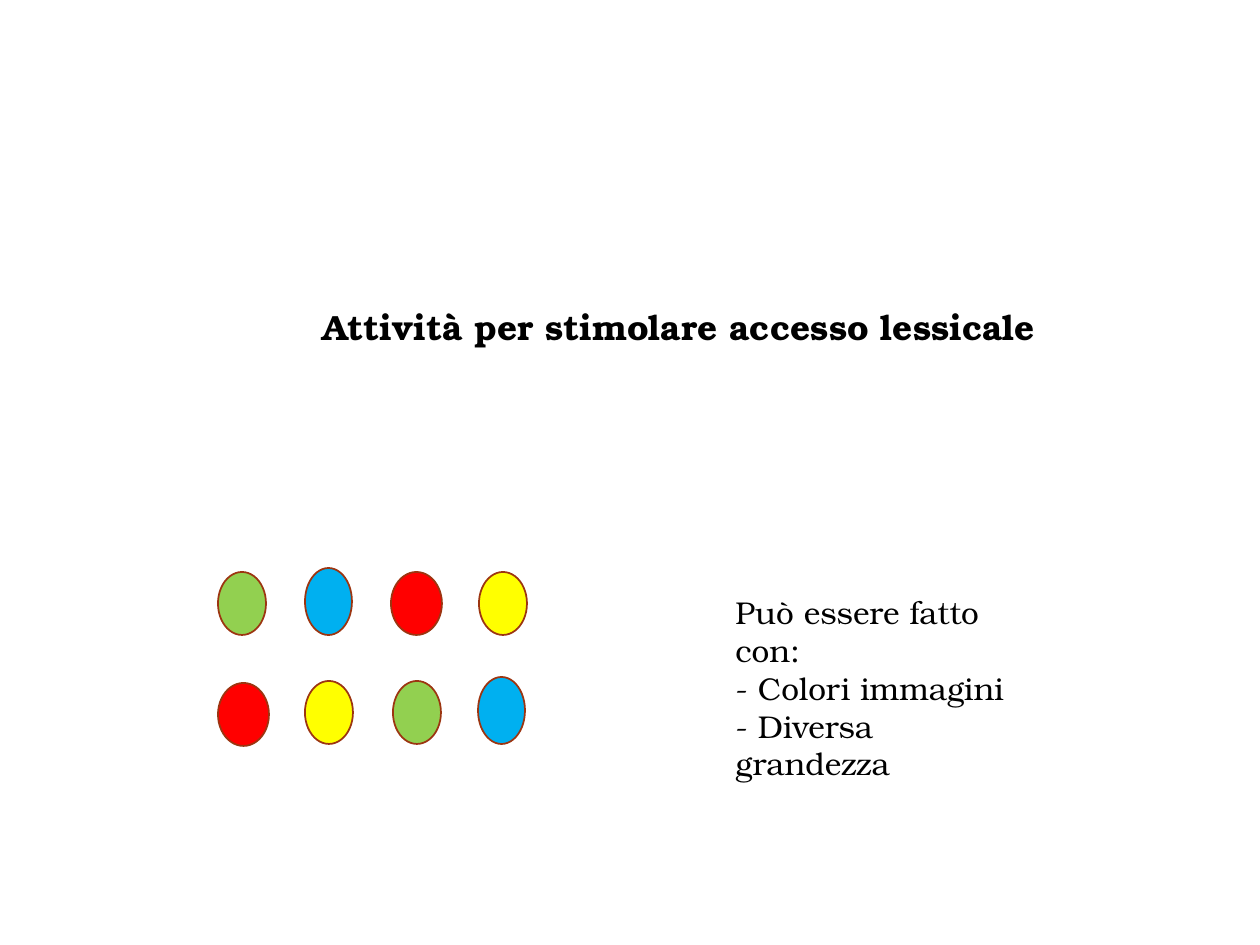
from pptx import Presentation
from pptx.dml.color import RGBColor
from pptx.enum.shapes import MSO_SHAPE
from pptx.enum.text import MSO_ANCHOR, PP_ALIGN
from pptx.util import Emu, Pt

PX = 914400 // 126
BLACK = RGBColor(0x00, 0x00, 0x00)
YELLOW = RGBColor(0xFF, 0xFF, 0x00)
GREEN = RGBColor(0x92, 0xD0, 0x50)
RED = RGBColor(0xFF, 0x00, 0x00)
BLUE = RGBColor(0x00, 0xB0, 0xF0)
OUTLINE = RGBColor(0x9C, 0x35, 0x11)
FONT = "TeX Gyre Bonum"


def px(*lengths):
    return [Emu(length * PX) for length in lengths]


def format_font(font, **values):
    for name, value in values.items():
        setattr(font, name, value)
    font.color.rgb = BLACK


deck = Presentation()
deck.slide_width, deck.slide_height = px(1260, 945)
page = deck.slides.add_slide(deck.slide_layouts[5])

title = page.shapes.title
title.left, title.top, title.width, title.height = px(168, 243, 1022, 571)
frame = title.text_frame
frame.text = "Attività per stimolare accesso lessicale"
frame.word_wrap = True
frame.vertical_anchor = MSO_ANCHOR.TOP
frame.margin_top = px(67)[0]
para = frame.paragraphs[0]
para.alignment = PP_ALIGN.CENTER
para.line_spacing = 0.9
format_font(para.font, name=FONT, size=Pt(20), bold=True)

oval_sizes = {YELLOW: (48, 63), GREEN: (48, 63), RED: (51, 63), BLUE: (47, 67)}
ovals = [
    (GREEN, 218, 572), (BLUE, 305, 568), (RED, 391, 572), (YELLOW, 479, 572),
    (RED, 218, 683), (YELLOW, 305, 681), (GREEN, 393, 681), (BLUE, 478, 677),
]
for color, left, top in ovals:
    oval = page.shapes.add_shape(MSO_SHAPE.OVAL, *px(left, top, *oval_sizes[color]))
    oval.shadow.inherit = False
    oval.fill.solid()
    oval.fill.fore_color.rgb = color
    oval.line.color.rgb = OUTLINE
    oval.line.width = Pt(1)

box = page.shapes.add_textbox(*px(723, 587, 326, 127))
frame = box.text_frame
frame.word_wrap = True
frame.text = "Può essere fatto con:\n- Colori immagini\n- Diversa grandezza"
for para in frame.paragraphs:
    format_font(para.font, name=FONT, size=Pt(18))

deck.save("out.pptx")
